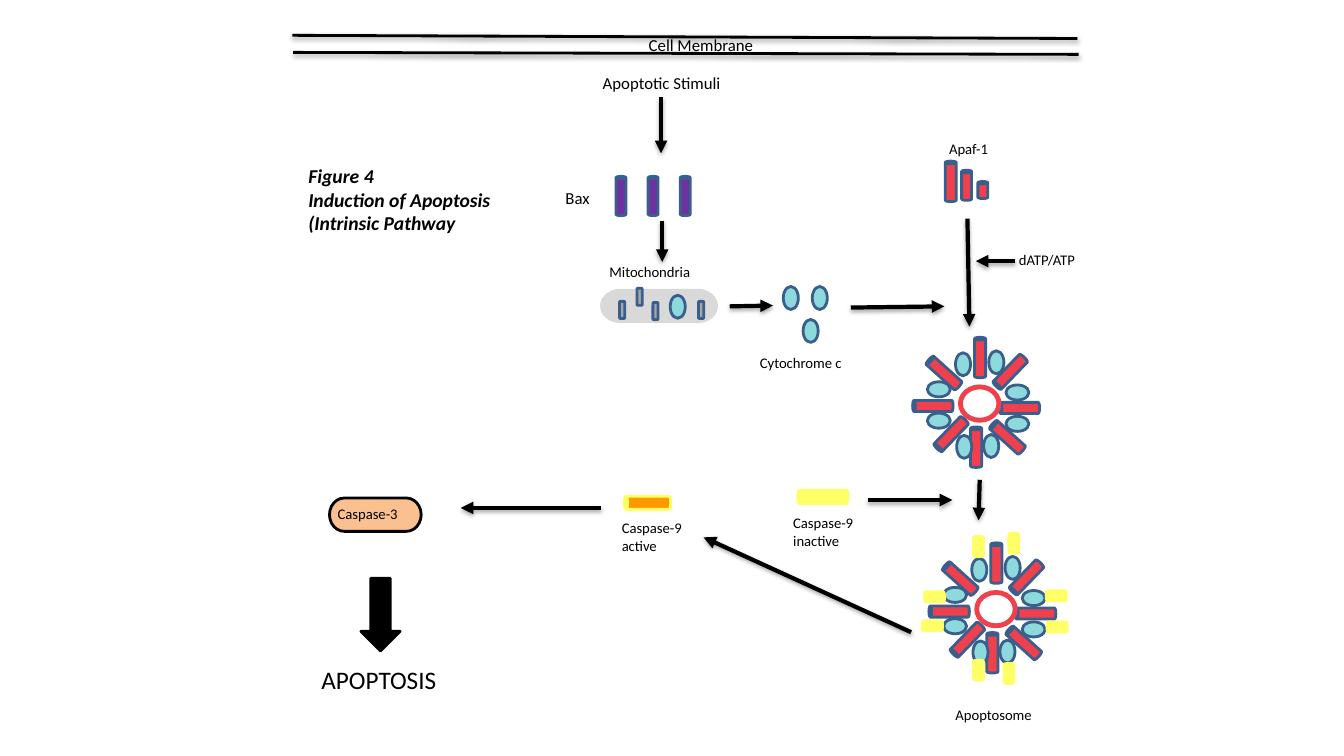
from dataclasses import dataclass, replace

from lxml import etree
from pptx import Presentation
from pptx.dml.color import RGBColor
from pptx.enum import shapes, text
from pptx.oxml import ns
from pptx.util import Cm, Pt

COLOURS = {
    "black": "000000", "outline": "3A5F8C", "apaf": "EF414D", "cytochrome": "8DD9DB",
    "bax": "7030A0", "channel": "A6A6A6", "mitochondrion": "D9D9D9",
    "caspase_9": "FFFF66", "active": "FF9900", "caspase_3": "FAC090",
}
AUTO = shapes.MSO_SHAPE


@dataclass(frozen=True)
class Part:
    """A preset shape; x and y are its centre, all lengths in cm."""
    kind: int
    width: float
    height: float
    fill: str | None
    line: str = "outline"
    weight: float = 2
    x: float = 0
    y: float = 0
    rotation: float = 0


@dataclass(frozen=True)
class Line:
    x1: float
    y1: float
    x2: float
    y2: float


@dataclass(frozen=True)
class Label:
    words: str
    left: float
    top: float
    width: float = 3.18
    height: float = 0.71
    size: float = 10.5
    bold_italic: bool = False


APAF = Part(AUTO.CAN, 0.28, 1.02, "apaf")
CYTOCHROME = Part(AUTO.FLOWCHART_CONNECTOR, 0.38, 0.58, "cytochrome")
RING = Part(AUTO.FLOWCHART_CONNECTOR, 0.97, 0.84, None, "apaf", 3.5)
BAX = Part(AUTO.CAN, 0.25, 0.99, "bax")
CHANNEL = Part(AUTO.ROUNDED_RECTANGLE, 0.13, 0.43, "channel")
CASPASE_9 = Part(AUTO.CAN, 0.25, 0.51, "caspase_9", "caspase_9")

# Offsets from the centre of the wheel, and rotation
WHEEL_APAF = [(0.01, -1.16, 0), (1, 0.11, 270), (-1.18, 0.06, 270), (-0.09, 1.1, 0),
              (-0.72, 0.77, 224), (0.77, -0.8, 224), (0.7, 0.85, 312), (-0.9, -0.77, 312)]
WHEEL_CYTOCHROME = [(-0.42, -0.99, 0), (0.42, -1.04, 0), (-1.03, -0.36, 270),
                    (-1.03, 0.43, 270), (-0.39, 1.09, 0), (0.95, 0.51, 270),
                    (0.95, -0.28, 270), (0.29, 1.07, 0)]
WHEEL_CENTRES = [(24.69, 10.17), (25.1, 15.35)]

CHANNELS = [(15.68, 7.81), (16.12, 7.48), (16.52, 7.84), (17.67, 7.81)]
CYTOCHROMES = [(17.08, 7.73), (19.93, 7.51), (20.43, 8.34), (20.66, 7.51)]
BOUND_CASPASES = [(25.55, 13.69, 0), (25.43, 16.97, 0), (24.66, 16.89, 0), (24.66, 13.77, 0),
                  (26.64, 15.8, 270), (23.55, 15.04, 90), (26.62, 15.01, 270), (23.5, 15.77, 270)]

MEMBRANE = [Line(7.37, 0.89, 27.15, 0.97), Line(7.39, 1.32, 27.18, 1.37)]
ARROWS = [
    Line(16.66, 2.44, 16.66, 3.86),
    Line(16.69, 5.56, 16.69, 6.6),
    Line(18.39, 7.72, 19.48, 7.7),
    Line(21.44, 7.75, 23.8, 7.72),
    Line(24.38, 5.51, 24.43, 8.23),
    Line(25.58, 6.58, 24.59, 6.58),
    Line(24.69, 12.09, 24.66, 13.11),
    Line(21.87, 12.6, 24, 12.6),
    Line(22.96, 15.93, 17.73, 13.54),
    Line(15.14, 12.8, 11.61, 12.8),
]
LABELS = [
    Label("Cell Membrane", 16.1, 0.74, 4.29, 0.76, 12),
    Label("Apoptotic Stimuli", 14.94, 1.7, 4.29, 0.76, 12),
    Label("Bax", 14, 4.6, 1.35, 0.76, 12),
    Label("Figure 4\nInduction of Apoptosis (Intrinsic Pathway", 7.52, 4.01, 5.21, 2.64, 14, True),
    Label("Mitochondria", 15.11, 6.5),
    Label("Cytochrome c", 18.9, 8.79),
    Label("Apaf-1", 23.67, 3.4),
    Label("dATP/ATP", 25.43, 6.2, 2.79),
    Label("Caspase-9\ninactive", 19.74, 12.83, 2.31, 1.14),
    Label("Caspase-9\nactive", 15.42, 12.95, 2.31, 1.14),
    Label("Caspase-3", 8.26, 12.6, 2.57),
    Label("APOPTOSIS", 7.85, 16.61, 4.34, 1.02, 18),
    Label("Apoptosome", 23.83, 17.65),
]


def colour(name: str) -> RGBColor:
    return RGBColor.from_string(COLOURS[name])


def draw_part(slide, part: Part) -> None:
    shape = slide.shapes.add_shape(
        part.kind, Cm(part.x - part.width / 2), Cm(part.y - part.height / 2),
        Cm(part.width), Cm(part.height))
    shape.rotation = part.rotation
    shape.shadow.inherit = False
    if part.fill is None:
        shape.fill.background()
    else:
        shape.fill.solid()
        shape.fill.fore_color.rgb = colour(part.fill)
    shape.line.color.rgb = colour(part.line)
    shape.line.width = Pt(part.weight)


def draw_each(slide, part: Part, places: list[tuple]) -> None:
    """Draw the part at every (x, y) or (x, y, rotation)."""
    for x, y, *rotation in places:
        draw_part(slide, replace(part, x=x, y=y, rotation=rotation[0] if rotation else 0))


def draw_wheel(slide, x: float, y: float) -> None:
    for part, offsets in ((APAF, WHEEL_APAF), (RING, [(0, 0, 0)]),
                          (CYTOCHROME, WHEEL_CYTOCHROME)):
        draw_each(slide, part, [(x + dx, y + dy, turn) for dx, dy, turn in offsets])


def draw_line(slide, line: Line, weight: float, opacity: int, arrow: bool = False) -> None:
    """Draw a black line with a soft shadow below it; opacity is in percent."""
    connector = slide.shapes.add_connector(
        shapes.MSO_CONNECTOR.STRAIGHT, Cm(line.x1), Cm(line.y1), Cm(line.x2), Cm(line.y2))
    connector.line.color.rgb = colour("black")
    connector.line.width = Pt(weight)
    if arrow:
        etree.SubElement(connector.line._get_or_add_ln(), ns.qn("a:tailEnd"), type="triangle")
    properties = connector._element.spPr
    effects = etree.SubElement(properties, ns.qn("a:effectLst"))
    shadow = etree.SubElement(effects, ns.qn("a:outerShdw"), blurRad=str(Pt(3.1)),
                              dist=str(Pt(1.7)), dir="5400000", rotWithShape="0")
    tint = etree.SubElement(shadow, ns.qn("a:srgbClr"), val=COLOURS["black"])
    etree.SubElement(tint, ns.qn("a:alpha"), val=str(opacity * 1000))


def add_text(slide, words: str, *, left: float, top: float, width: float, height: float,
             size: float, bold_italic: bool = False) -> None:
    box = slide.shapes.add_textbox(Cm(left), Cm(top), Cm(width), Cm(height))
    frame = box.text_frame
    frame.word_wrap = True
    frame.auto_size = text.MSO_AUTO_SIZE.SHAPE_TO_FIT_TEXT
    frame.text = words
    for paragraph in frame.paragraphs:
        font = paragraph.runs[0].font
        font.name = "Calibri"
        font.size = Pt(size)
        font.bold = font.italic = bold_italic
        font.color.rgb = colour("black")


def main() -> None:
    presentation = Presentation()
    presentation.slide_width, presentation.slide_height = Cm(33.87), Cm(19.05)
    slide = presentation.slides.add_slide(presentation.slide_layouts[6])

    for line in MEMBRANE:
        draw_line(slide, line, 2, 38)
    draw_part(slide, Part(AUTO.FLOWCHART_TERMINATOR, 2.9, 0.79, "mitochondrion",
                          "mitochondrion", x=16.61, y=7.71))
    draw_each(slide, CHANNEL, CHANNELS)
    draw_each(slide, CYTOCHROME, CYTOCHROMES)
    draw_each(slide, BAX, [(15.65 + 0.81 * i, 4.94) for i in range(3)])
    draw_part(slide, replace(APAF, x=23.96, y=4.57))
    draw_part(slide, replace(APAF, x=24.36, y=4.67, width=0.25, height=0.76))
    draw_part(slide, replace(APAF, x=24.77, y=4.79, width=0.25, height=0.43))
    for x, y in WHEEL_CENTRES:
        draw_wheel(slide, x, y)
    draw_each(slide, CASPASE_9, BOUND_CASPASES)
    free_caspase = replace(CASPASE_9, width=0.33, height=1.27, x=20.74, y=12.52, rotation=270)
    draw_part(slide, free_caspase)
    draw_part(slide, replace(free_caspase, height=1.17, x=16.32, y=12.67, fill="active"))
    draw_part(slide, Part(AUTO.FLOWCHART_TERMINATOR, 2.31, 0.84, "caspase_3", "black",
                          x=9.46, y=12.97))
    draw_part(slide, Part(AUTO.DOWN_ARROW, 0.99, 1.83, "black", "black", x=9.59, y=15.49))
    for arrow in ARROWS:
        draw_line(slide, arrow, 3, 35, arrow=True)
    for label in LABELS:
        add_text(slide, label.words, left=label.left, top=label.top, width=label.width,
                 height=label.height, size=label.size, bold_italic=label.bold_italic)
    presentation.save("out.pptx")


if __name__ == "__main__":
    main()
